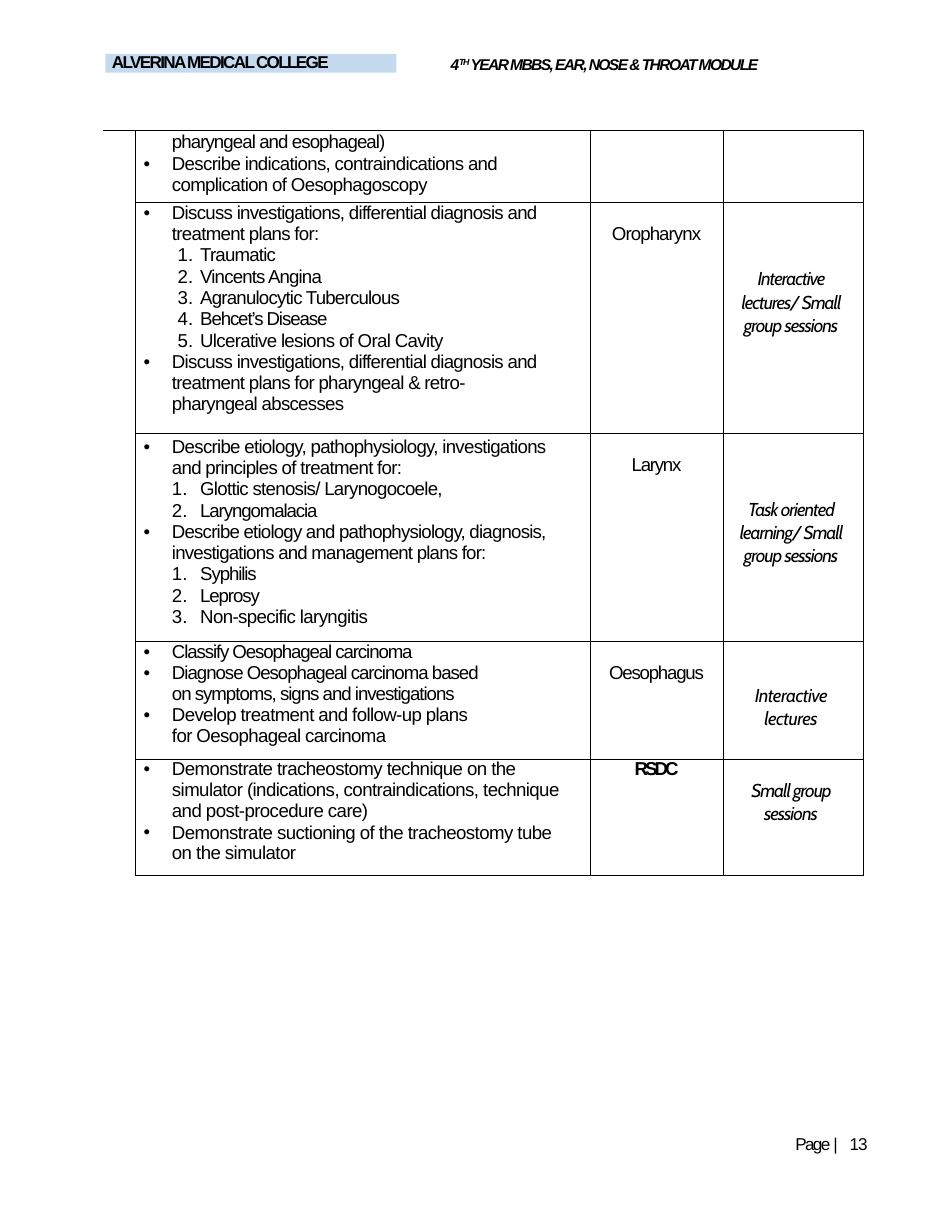
from dataclasses import dataclass
from typing import Any, NamedTuple, Optional

from lxml.etree import SubElement
from pptx import Presentation
from pptx.dml.color import RGBColor
from pptx.enum.shapes import MSO_SHAPE as Shape
from pptx.enum.text import MSO_ANCHOR as Anchor, PP_ALIGN as Align
from pptx.oxml.ns import qn
from pptx.util import Cm, Inches, Pt

COLORS = {"ink": "000000", "banner": "C5D9EF"}
BODY_FONT, METHOD_FONT = "Arial", "Cabin"
TABLE_LEFT, TABLE_TOP = 2.33, 2.96
COLUMN_WIDTHS = (0.74, 10.31, 3.02, 3.18)
TEXT_LEFT, BULLET_HANG = 0.83, 0.64
NUMBER_LEFT = 1.47
BORDER_TAGS = {"left": "a:lnL", "right": "a:lnR", "top": "a:lnT", "bottom": "a:lnB"}


class Objective(NamedTuple):
    text: str
    spacing: float
    marker: str = "bullet"
    right: float = 0


@dataclass
class ModuleRow:
    height: float
    objectives: list[Objective]
    topic: str = ""
    method: str = ""
    topic_spacing: float = -0.7
    topic_bold: bool = False
    objectives_top: float = 0
    topic_top: float = 0.48
    method_top: float = 1.47
    number_hang: float = 0.64
    method_spacing: float = -0.65


ROWS = [
    ModuleRow(1.63, [
        Objective("pharyngeal and esophageal)", -0.6, "none"),
        Objective("Describe indications, contraindications and complication of "
                  "Oesophagoscopy", -0.42),
    ], objectives_top=0.03),
    ModuleRow(5.23, [
        Objective("Discuss investigations, differential diagnosis and treatment "
                  "plans for:", -0.45),
        Objective("Traumatic", -0.5, "number"),
        Objective("Vincents Angina", -0.55, "number"),
        Objective("Agranulocytic Tuberculous", -0.5, "number"),
        Objective("Behcet’s Disease", -0.7, "number"),
        Objective("Ulcerative lesions of Oral Cavity", -0.42, "number"),
        Objective("Discuss investigations, differential diagnosis and treatment "
                  "plans for pharyngeal & retro-pharyngeal abscesses", -0.45, right=0.5),
    ], "Oropharynx", "Interactive lectures/ Small group sessions", -0.6, number_hang=0.51),
    ModuleRow(4.72, [
        Objective("Describe etiology, pathophysiology, investigations and "
                  "principles of treatment for:", -0.45),
        Objective("Glottic stenosis/ Larynogocoele,", -0.45, "number"),
        Objective("Laryngomalacia", -0.7, "number"),
        Objective("Describe etiology and pathophysiology, diagnosis, "
                  "investigations and management plans for:", -0.5),
        Objective("Syphilis", -0.7, "number"),
        Objective("Leprosy", -0.7, "number"),
        Objective("Non-specific laryngitis", -0.4, "number"),
    ], "Larynx", "Task oriented learning/ Small group sessions", -0.8, objectives_top=0.08),
    ModuleRow(2.67, [
        Objective("Classify Oesophageal carcinoma", -0.7),
        Objective("Diagnose Oesophageal carcinoma based on symptoms, signs and "
                  "investigations", -0.65, right=2),
        Objective("Develop treatment and follow-up plans for Oesophageal "
                  "carcinoma", -0.4, right=2),
    ], "Oesophagus", "Interactive lectures", -0.8, method_top=0.97, method_spacing=-0.3),
    ModuleRow(2.64, [
        Objective("Demonstrate tracheostomy technique on the simulator "
                  "(indications, contraindications, technique and post-procedure "
                  "care)", -0.38),
        Objective("Demonstrate suctioning of the tracheostomy tube on the "
                  "simulator", -0.36),
    ], "RSDC", "Small group sessions", -1.9, True, topic_top=0, method_top=0.45),
]


def add_span(para: Any, text: str, *, size: float = 12, font: str = BODY_FONT,
             spacing: float = 0, bold: bool = False, italic: bool = False,
             baseline: int = 0) -> None:
    """Append formatted text; spacing is in points, baseline in percent."""
    span = para.add_run()
    span.text = text
    span.font.size, span.font.name = Pt(size), font
    span.font.bold, span.font.italic = bold, italic
    span.font.color.rgb = RGBColor.from_string(COLORS["ink"])
    properties = span.font._element
    properties.set("spc", str(round(spacing * 100)))
    if baseline:
        properties.set("baseline", str(baseline * 1000))


def set_marker(para: Any, objective: Objective, number_hang: float) -> None:
    """Set the indents and the bullet or number of a paragraph."""
    numbered = objective.marker == "number"
    hang = {"bullet": BULLET_HANG, "number": number_hang, "none": 0}[objective.marker]
    para.level = int(numbered)
    properties = para._p.get_or_add_pPr()
    properties.set("marL", str(Cm(NUMBER_LEFT if numbered else TEXT_LEFT)))
    properties.set("marR", str(Cm(objective.right)))
    properties.set("indent", str(-Cm(hang)))
    if numbered:
        SubElement(properties, qn("a:buFont"), typeface=BODY_FONT)
        SubElement(properties, qn("a:buAutoNum"), type="arabicPeriod")
    elif objective.marker == "bullet":
        SubElement(properties, qn("a:buFont"), typeface=BODY_FONT)
        SubElement(properties, qn("a:buChar"), char="•")


def style_cell(cell: Any, borders: dict[str, float], *, top: float = 0,
               left: float = 0, right: float = 0) -> None:
    """Set margins in cm, no fill, and border widths in points by side."""
    cell.margin_top, cell.margin_bottom = Cm(top), 0
    cell.margin_left, cell.margin_right = Cm(left), Cm(right)
    cell.vertical_anchor = Anchor.TOP
    properties = cell._tc.get_or_add_tcPr()
    for side, tag in BORDER_TAGS.items():
        line = SubElement(properties, qn(tag), w=str(Pt(borders.get(side, 0))))
        if side in borders:
            fill = SubElement(line, qn("a:solidFill"))
            SubElement(fill, qn("a:srgbClr"), val=COLORS["ink"])
        else:
            SubElement(line, qn("a:noFill"))
    cell.fill.background()


def fill_objectives(cell: Any, row: ModuleRow) -> None:
    frame = cell.text_frame
    for index, objective in enumerate(row.objectives):
        para = frame.add_paragraph() if index else frame.paragraphs[0]
        para.space_before = Pt(0.3)
        set_marker(para, objective, row.number_hang)
        add_span(para, objective.text, spacing=objective.spacing)


def fill_centred(cell: Any, text: str, **text_format: Any) -> None:
    para = cell.text_frame.paragraphs[0]
    para.alignment = Align.CENTER
    if text:
        add_span(para, text, **text_format)


def add_module_table(page: Any) -> None:
    table = page.shapes.add_table(
        len(ROWS), len(COLUMN_WIDTHS), Cm(TABLE_LEFT), Cm(TABLE_TOP),
        Cm(sum(COLUMN_WIDTHS)), Cm(sum(row.height for row in ROWS))).table
    table.first_row = table.horz_banding = False
    for column, width in zip(table.columns, COLUMN_WIDTHS):
        column.width = Cm(width)
    for index, row in enumerate(ROWS):
        table.rows[index].height = Cm(row.height)
        margin, objectives, topic, method = (table.cell(index, i) for i in range(4))
        edge = 0.5 if index else 0.75
        box = {"left": 0.5, "right": 0.5, "top": edge, "bottom": 0.5}
        style_cell(margin, {"right": 0.5} if index else {"right": 0.5, "top": edge})
        style_cell(objectives, box, top=row.objectives_top, right=0.5)
        style_cell(topic, box, top=row.topic_top)
        style_cell(method, box, top=row.method_top if row.method else 0,
                   left=0.3, right=0.4)
        fill_objectives(objectives, row)
        fill_centred(topic, row.topic, spacing=row.topic_spacing, bold=row.topic_bold)
        fill_centred(method, row.method, font=METHOD_FONT, italic=True,
                     spacing=row.method_spacing)
        method.text_frame.paragraphs[0].line_spacing = 1.02
    table.cell(0, 0).merge(table.cell(len(ROWS) - 1, 0))


def start_line(shape: Any, left: float, line_height: Optional[float] = None) -> Any:
    """Clear the insets of a one-line shape and return its paragraph."""
    frame = shape.text_frame
    frame.margin_left, frame.margin_right = Cm(left), 0
    frame.margin_top = frame.margin_bottom = 0
    frame.vertical_anchor, frame.word_wrap = Anchor.TOP, True
    para = frame.paragraphs[0]
    para.alignment = Align.LEFT
    if line_height:
        para.line_spacing = Pt(line_height)
    return para


def add_header(page: Any) -> None:
    title = page.shapes.add_textbox(Cm(10.19), Cm(1.24), Cm(9.22), Cm(0.46))
    para = start_line(title, 0.03)
    para.space_before = Pt(0.9)
    bold_italic = {"bold": True, "italic": True}
    add_span(para, "4", size=10, spacing=-0.6, **bold_italic)
    add_span(para, "TH ", size=9.8, spacing=-0.9, baseline=30, **bold_italic)
    add_span(para, "YEAR MBBS, EAR, NOSE & THROAT MODULE", size=10, spacing=-1,
             **bold_italic)

    banner = page.shapes.add_shape(Shape.RECTANGLE, Cm(2.39), Cm(1.22), Cm(6.6), Cm(0.43))
    banner.shadow.inherit = False
    banner.fill.solid()
    banner.fill.fore_color.rgb = RGBColor.from_string(COLORS["banner"])
    banner.line.fill.background()
    add_span(start_line(banner, 0.15, 11.8), "ALVERINA MEDICAL COLLEGE", size=11,
             spacing=-1.1, bold=True)


def add_page_number(page: Any) -> None:
    footer = page.shapes.add_textbox(Cm(18.01), Cm(25.76), Cm(2.2), Cm(0.46))
    para = start_line(footer, 0.03, 11.5)
    for text, spacing in (("Page ", -1.1), ("| ", 2.2), ("13", -0.6)):
        add_span(para, text, size=11, spacing=spacing)


def main() -> None:
    deck = Presentation()
    deck.slide_width, deck.slide_height = Inches(8.5), Inches(11)
    page = deck.slides.add_slide(deck.slide_layouts[6])
    add_page_number(page)
    add_header(page)
    add_module_table(page)
    deck.save("out.pptx")


if __name__ == "__main__":
    main()
